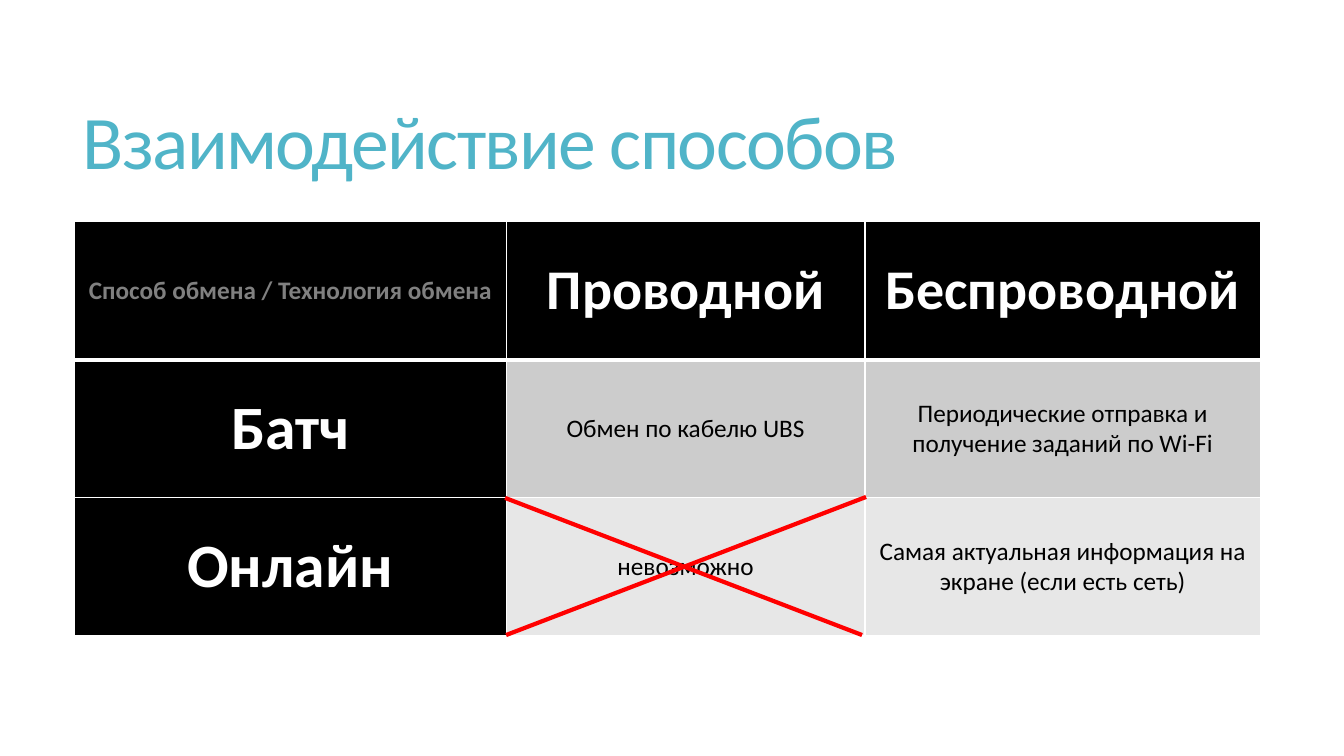
from lxml import etree
from pptx import Presentation
from pptx.dml.color import RGBColor
from pptx.enum.shapes import MSO_CONNECTOR
from pptx.enum.text import MSO_ANCHOR, PP_ALIGN
from pptx.oxml.ns import qn
from pptx.util import Inches, Pt

LINE = MSO_CONNECTOR.STRAIGHT
MIDDLE = MSO_ANCHOR.MIDDLE
LEFT, CENTER = PP_ALIGN.LEFT, PP_ALIGN.CENTER
FONT = "Calibri"
BLACK, WHITE, GRAY, RED, TEAL = "000000", "FFFFFF", "808080", "FF0000", "50B4C8"
BANDS = [BLACK, "CCCCCC", "E7E7E7"]
WIDTHS = [4.28, 3.56, 3.92]
HEIGHT = 1.37
ROWS = [
    ["Способ обмена / Технология обмена", "Проводной", "Беспроводной"],
    ["Батч", "Обмен по кабелю UBS",
     "Периодические отправка и получение заданий по Wi-Fi"],
    ["Онлайн", "невозможно",
     "Самая актуальная информация на экране (если есть сеть)"],
]
CROSS = [(5.01, 4.94, 8.55, 6.3), (5.02, 6.3, 8.59, 4.93)]


def color(code):
    """Turn a hex string into a colour."""
    return RGBColor.from_string(code)


def style(para, size, code, bold, align):
    """Format a whole paragraph."""
    para.alignment = align
    para.font.name = FONT
    para.font.size = Pt(size)
    para.font.bold = bold
    para.font.color.rgb = color(code)


def add_title(slide, text):
    """Place and format the slide title."""
    title = slide.shapes.title
    title.left, title.top = Inches(0.72), Inches(0.55)
    title.width, title.height = Inches(11.78), Inches(1.81)
    frame = title.text_frame
    frame.text = text
    frame.word_wrap = True
    frame.vertical_anchor = MIDDLE
    para = frame.paragraphs[0]
    para.line_spacing = 0.85
    style(para, 54, TEAL, False, LEFT)
    para.runs[0].font._element.set("spc", "-120")


def set_edge(cell, index, side, points):
    """Draw one white border of a cell."""
    edge = etree.Element(qn("a:ln" + side), w=str(Pt(points)))
    fill = etree.SubElement(edge, qn("a:solidFill"))
    etree.SubElement(fill, qn("a:srgbClr"), val=WHITE)
    cell._tc.get_or_add_tcPr().insert(index, edge)


def cell_font(row, col):
    """Give the size, colour and weight for a cell."""
    if row == col == 0:
        return 18, GRAY, True
    if row == 0:
        return 40, WHITE, True
    if col == 0:
        return 44, WHITE, True
    return 18, BLACK, False


def fill_cell(cell, text, row, col):
    """Write and format one cell."""
    cell.text = text
    cell.vertical_anchor = MIDDLE
    style(cell.text_frame.paragraphs[0], *cell_font(row, col), CENTER)
    cell.fill.solid()
    cell.fill.fore_color.rgb = color(BANDS[row] if col else BLACK)
    edges = {"L": 1, "R": 1, "T": 3 if row == 1 else 1, "B": 1 if row else 3}
    for index, (side, points) in enumerate(edges.items()):
        set_edge(cell, index, side, points)


def add_grid(slide):
    """Add the table of exchange methods."""
    table = slide.shapes.add_table(
        len(ROWS), len(WIDTHS), Inches(0.74), Inches(2.2),
        Inches(sum(WIDTHS)), Inches(HEIGHT * len(ROWS))).table
    for column, width in zip(table.columns, WIDTHS):
        column.width = Inches(width)
    for row, texts in enumerate(ROWS):
        table.rows[row].height = Inches(HEIGHT)
        for col, text in enumerate(texts):
            fill_cell(table.cell(row, col), text, row, col)


def add_line(slide, ends):
    """Add a red line between two points."""
    line = slide.shapes.add_connector(LINE, *map(Inches, ends))
    line.line.color.rgb = color(RED)
    line.line.width = Pt(3)
    etree.SubElement(line._element.spPr, qn("a:effectLst"))


def main():
    """Build and save the slide."""
    deck = Presentation()
    deck.slide_width, deck.slide_height = Inches(13.33), Inches(7.5)
    slide = deck.slides.add_slide(deck.slide_layouts[5])
    add_title(slide, "Взаимодействие способов")
    add_grid(slide)
    for ends in CROSS:
        add_line(slide, ends)
    deck.save("out.pptx")


if __name__ == "__main__":
    main()
